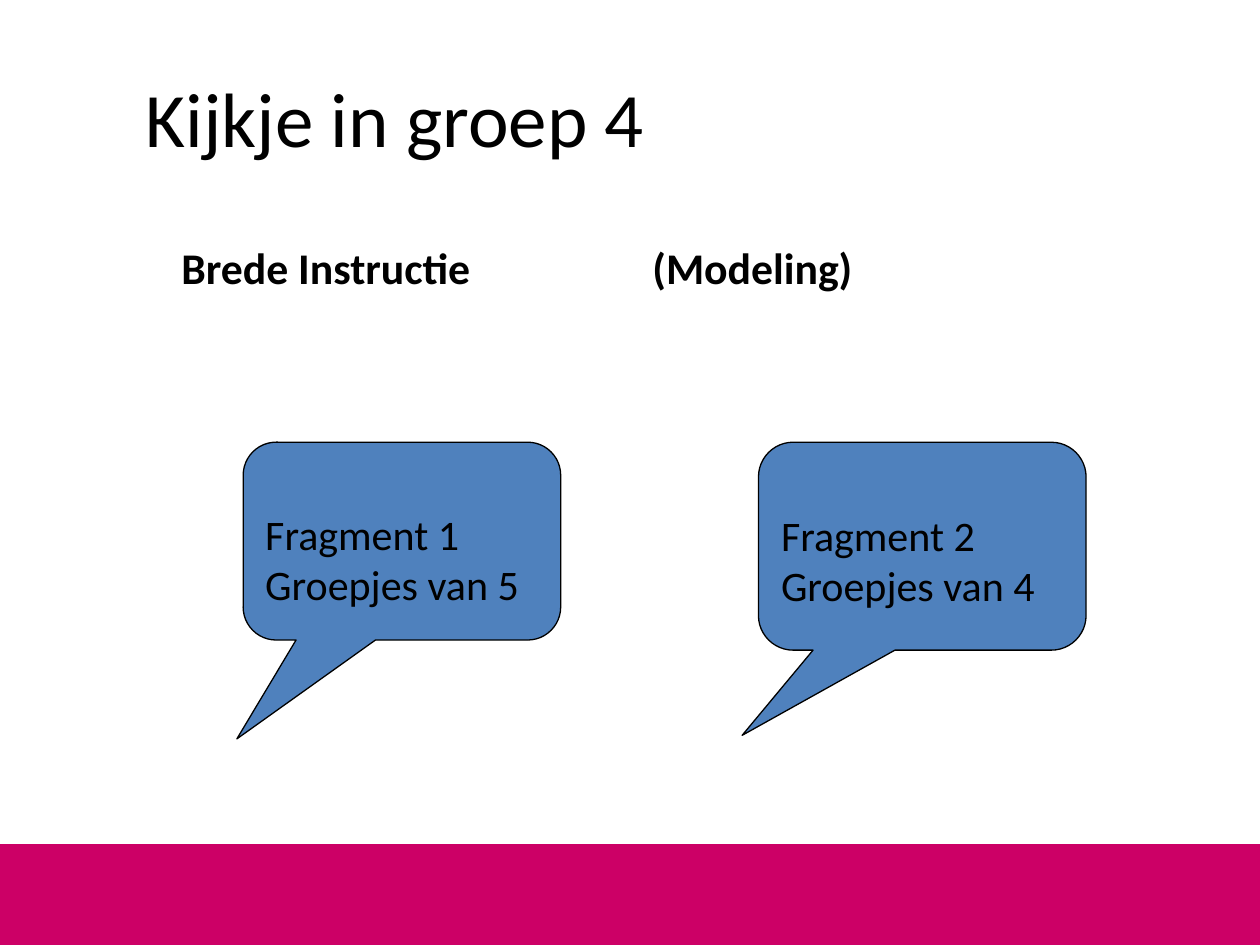
from pptx import Presentation
from pptx.dml.color import RGBColor
from pptx.enum.shapes import MSO_SHAPE as Shape
from pptx.enum.text import MSO_ANCHOR as Anchor, PP_ALIGN as Align
from pptx.util import Inches, Pt

BLACK, BLUE, MAGENTA = "000000", "4F81BD", "CC0066"


def color(value):
    return RGBColor.from_string(value)


def write_lines(shape, lines, size, anchor, bold=False, **margins):
    """Fill a shape with one paragraph per line; margins are in inches."""
    frame = shape.text_frame
    frame.text = "\n".join(lines)
    frame.word_wrap = True
    frame.vertical_anchor = anchor
    for side, margin in margins.items():
        setattr(frame, f"margin_{side}", Inches(margin))
    font_format = {"name": "Calibri", "size": Pt(size), "bold": bold}
    for paragraph in frame.paragraphs:
        paragraph.alignment = Align.LEFT
        for name, value in font_format.items():
            setattr(paragraph.font, name, value)
        paragraph.font.color.rgb = color(BLACK)


def add_filled_shape(slide, kind, box, fill):
    shape = slide.shapes.add_shape(kind, *map(Inches, box))
    shape.shadow.inherit = False
    shape.fill.solid()
    shape.fill.fore_color.rgb = color(fill)
    return shape


def add_footer_bar(slide, box):
    bar = add_filled_shape(slide, Shape.RECTANGLE, box, MAGENTA)
    bar.line.fill.background()


def add_title(slide, box, text):
    title = slide.shapes.add_textbox(*map(Inches, box))
    write_lines(title, [text], 44, Anchor.MIDDLE)


def add_heading(slide, box, text, left_margin):
    heading = slide.shapes.add_textbox(*map(Inches, box))
    write_lines(heading, [text], 25, Anchor.BOTTOM, bold=True, left=left_margin)


def add_fragment_callout(slide, box, pointer, lines):
    """Add a speech bubble; pointer is its tip relative to the box centre."""
    callout = add_filled_shape(slide, Shape.ROUNDED_RECTANGULAR_CALLOUT, box, BLUE)
    for index, value in enumerate((*pointer, 0.167)):
        callout.adjustments[index] = value
    callout.line.color.rgb = color(BLACK)
    callout.line.width = Pt(0.75)
    write_lines(callout, lines, 24, Anchor.TOP, top=0.45)


def main():
    presentation = Presentation()
    presentation.slide_width = Inches(10)
    presentation.slide_height = Inches(7.5)
    slide = presentation.slides.add_slide(presentation.slide_layouts[6])

    add_footer_bar(slide, (0, 6.7, 10, 0.8))
    add_title(slide, (1.06, 0.3, 7.48, 1.25), "Kijkje in groep 4")
    add_heading(slide, (1.3, 1.68, 3.62, 0.7), "Brede Instructie", 0.14)
    add_heading(slide, (5.08, 1.68, 4.42, 0.7), "(Modeling)", 0.1)
    add_fragment_callout(slide, (1.93, 3.51, 2.52, 1.57), (-0.52, 1.0),
                         ["Fragment 1", "Groepjes van 5"])
    add_fragment_callout(slide, (6.02, 3.51, 2.6, 1.65), (-0.55, 0.91),
                         ["Fragment 2", "Groepjes van 4"])
    presentation.save("out.pptx")


if __name__ == "__main__":
    main()
